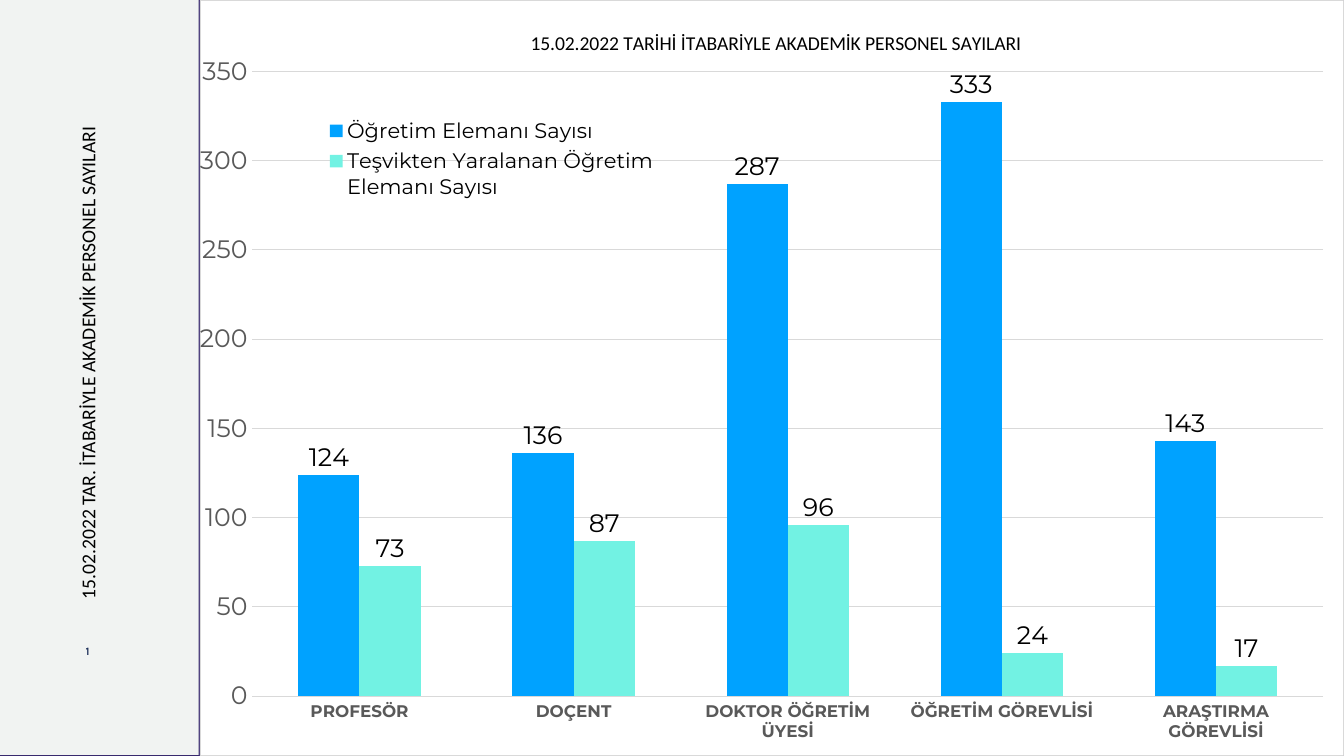
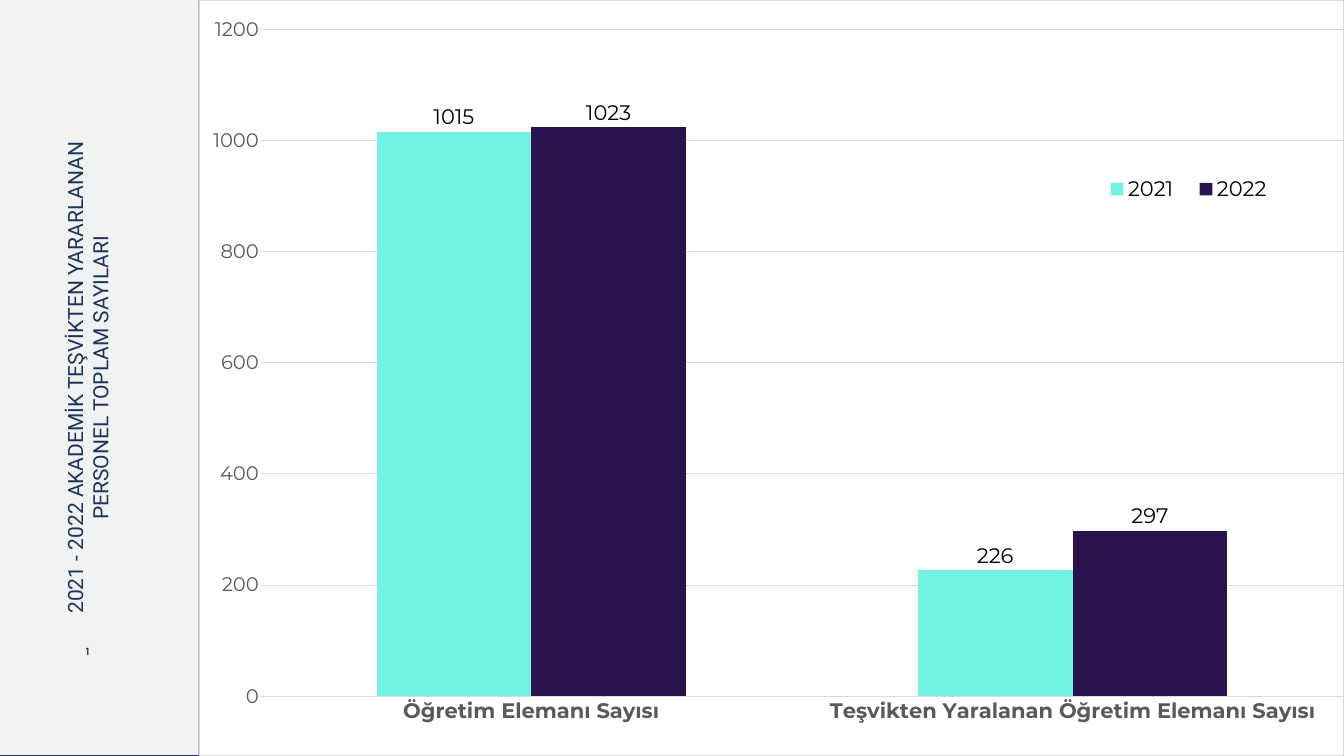
from lxml.etree import SubElement
from pptx import Presentation
from pptx.chart.data import CategoryChartData
from pptx.dml.color import RGBColor
from pptx.enum.chart import XL_CHART_TYPE, XL_LABEL_POSITION, XL_LEGEND_POSITION, XL_TICK_MARK
from pptx.enum.shapes import MSO_SHAPE
from pptx.enum.text import MSO_ANCHOR, MSO_AUTO_SIZE, PP_ALIGN
from pptx.oxml import parse_xml
from pptx.oxml.ns import nsdecls, qn
from pptx.util import Inches, Pt

PURPLE = RGBColor(0x38, 0x29, 0x6E)
BAND_GREY = RGBColor(0xF1, 0xF3, 0xF2)
NAVY = RGBColor(0x20, 0x32, 0x5C)
BLACK = RGBColor(0, 0, 0)
WHITE = RGBColor(0xFF, 0xFF, 0xFF)
AXIS_GREY = RGBColor(0x59, 0x59, 0x59)
GRID_GREY = RGBColor(0xD9, 0xD9, 0xD9)
BLUE = RGBColor(0x00, 0xA2, 0xFF)
TURQUOISE = RGBColor(0x72, 0xF2, 0xE3)
DARK_PURPLE = RGBColor(0x29, 0x14, 0x4E)

CHART_FONT = "Montserrat"
TITLE_ONLY = 5


def style_font(font, name, size, color, bold=False):
    font.name = name
    font.size = Pt(size)
    font.bold = bold
    font.color.rgb = color


def write_line(frame, text, name, size, color, bold=False):
    """Put one centred line of text into a frame with the shared margins."""
    frame.auto_size = MSO_AUTO_SIZE.NONE
    frame.vertical_anchor = MSO_ANCHOR.MIDDLE
    frame.margin_left = frame.margin_right = Inches(0.08)
    frame.margin_top = frame.margin_bottom = Inches(0.08)
    paragraph = frame.paragraphs[0]
    paragraph.alignment = PP_ALIGN.CENTER
    run = paragraph.add_run()
    run.text = text
    style_font(run.font, name, size, color, bold)


def add_side_band(slide, page):
    band = slide.shapes.add_shape(
        MSO_SHAPE.RECTANGLE, 0, Inches(-0.02), Inches(3.94), Inches(15))
    band.shadow.inherit = False
    band.fill.solid()
    band.fill.fore_color.rgb = BAND_GREY
    band.line.fill.background()
    page_number = slide.shapes.add_textbox(
        Inches(1.59), Inches(12.7), Inches(0.3), Inches(0.43))
    page_number.text_frame.word_wrap = False
    write_line(page_number.text_frame, page, "Karla", 16, NAVY, bold=True)


def set_side_title(slide, text, box, name, size, color):
    """Turn the title upwards and bring it in front of the band."""
    title = slide.shapes.title
    title.left, title.top, title.width, title.height = map(Inches, box)
    title.rotation = 270
    title.text_frame.word_wrap = True
    write_line(title.text_frame, text, name, size, color)
    slide.shapes._spTree.append(title._element)


def set_layout(part, index, inner=False, **fractions):
    """Place a chart part by fractions of the chart area."""
    for old in part.findall(qn("c:layout")):
        part.remove(old)
    layout = parse_xml(f"<c:layout {nsdecls('c')}><c:manualLayout/></c:layout>")
    values = {"layoutTarget": "inner"} if inner else {}
    values.update(xMode="edge", yMode="edge", **fractions)
    for tag, value in values.items():
        SubElement(layout[0], qn(f"c:{tag}")).set("val", str(value))
    part.insert(index, layout)


def paint_chart_area(chart):
    chart_area = parse_xml(
        f'<c:spPr {nsdecls("c", "a")}>'
        f'<a:solidFill><a:srgbClr val="{WHITE}"/></a:solidFill>'
        f'<a:ln w="{Pt(0.75)}"><a:solidFill><a:srgbClr val="{GRID_GREY}"/></a:solidFill></a:ln>'
        '</c:spPr>')
    chart._chartSpace.find(qn("c:chart")).addnext(chart_area)


def style_axis(axis, size, tick, bold=False):
    style_font(axis.tick_labels.font, CHART_FONT, size, AXIS_GREY, bold)
    axis.major_tick_mark = tick
    axis.minor_tick_mark = XL_TICK_MARK.NONE
    axis.format.line.fill.background()


def add_column_chart(slide, left, width, categories, series, label_size,
                     category_size, value_size, top_value, step, tick, plot, legend):
    """Series are (name, values, colour); plot and legend are layout fractions."""
    data = CategoryChartData()
    data.categories = categories
    for name, values, _ in series:
        data.add_series(name, values)
    chart = slide.shapes.add_chart(
        XL_CHART_TYPE.COLUMN_CLUSTERED, Inches(left), 0,
        Inches(width), Inches(15), data).chart
    style_font(chart.font, CHART_FONT, 10, BLACK)
    paint_chart_area(chart)
    chart.has_title = False

    columns = chart.plots[0]
    columns.gap_width = 150
    columns.overlap = 0
    columns.vary_by_categories = False
    for column, (_, _, color) in zip(columns.series, series):
        column.format.fill.solid()
        column.format.fill.fore_color.rgb = color
        labels = column.data_labels
        labels.show_value = True
        labels.position = XL_LABEL_POSITION.OUTSIDE_END
        style_font(labels.font, CHART_FONT, label_size, BLACK)

    style_axis(chart.category_axis, category_size, tick, bold=True)
    value_axis = chart.value_axis
    style_axis(value_axis, value_size, tick)
    value_axis.minimum_scale = 0
    value_axis.maximum_scale = top_value
    value_axis.major_unit = step
    value_axis.has_major_gridlines = True
    value_axis.major_gridlines.format.line.color.rgb = GRID_GREY
    value_axis.major_gridlines.format.line.width = Pt(0.75)

    chart.has_legend = True
    chart.legend.position = XL_LEGEND_POSITION.RIGHT
    chart.legend.include_in_layout = False
    style_font(chart.legend.font, CHART_FONT, 30, BLACK)
    set_layout(chart.legend._element, 1, **legend)
    set_layout(chart._chartSpace.find(".//" + qn("c:plotArea")), 0, inner=True, **plot)
    return chart


def add_chart_title(chart, text):
    chart.has_title = True
    run = chart.chart_title.text_frame.paragraphs[0].add_run()
    run.text = text
    style_font(run.font, "Calibri", 28, BLACK)
    set_layout(chart.chart_title._element, 1, x=0.286, y=0.034)


def add_slide(prs, page="1"):
    slide = prs.slides.add_slide(prs.slide_layouts[TITLE_ONLY])
    add_side_band(slide, page)
    return slide


def build_staff_by_rank(prs):
    slide = add_slide(prs)
    set_side_title(slide, "15.02.2022 TAR. İTABARİYLE AKADEMİK PERSONEL SAYILARI",
                   (-3.41, 6.89, 10.29, 0.63), "Calibri", 28, BLACK)
    chart = add_column_chart(
        slide, 3.96, 22.71,
        ["PROFESÖR", "DOÇENT", "DOKTOR ÖĞRETİM ÜYESİ", "ÖĞRETİM GÖREVLİSİ",
         "ARAŞTIRMA GÖREVLİSİ"],
        [("Öğretim Elemanı Sayısı", (124, 136, 287, 333, 143), BLUE),
         ("Teşvikten Yaralanan Öğretim Elemanı Sayısı", (73, 87, 96, 24, 17), TURQUOISE)],
        label_size=36, category_size=24, value_size=36, top_value=350, step=50,
        tick=XL_TICK_MARK.OUTSIDE,
        plot=dict(x=0.046, y=0.094, w=0.936, h=0.827),
        legend=dict(x=0.1, y=0.15, w=0.31, h=0.12))
    add_chart_title(chart, "15.02.2022 TARİHİ İTABARİYLE AKADEMİK PERSONEL SAYILARI")


def build_yearly_totals(prs):
    slide = add_slide(prs)
    set_side_title(slide, "2021 - 2022 AKADEMİK TEŞVİKTEN YARARLANAN PERSONEL TOPLAM SAYILARI",
                   (-3.12, 6.91, 9.71, 1.17), "Roboto", 30, NAVY)
    add_column_chart(
        slide, 3.94, 22.72,
        ["Öğretim Elemanı Sayısı", "Teşvikten Yaralanan Öğretim Elemanı Sayısı"],
        [("2021", (1015, 226), TURQUOISE), ("2022", (1023, 297), DARK_PURPLE)],
        label_size=30, category_size=30, value_size=28, top_value=1200, step=200,
        tick=XL_TICK_MARK.NONE,
        plot=dict(x=0.054, y=0.038, w=0.946, h=0.883),
        legend=dict(x=0.78, y=0.225, w=0.17, h=0.05))


def main():
    prs = Presentation()
    prs.slide_width = Inches(26.67)
    prs.slide_height = Inches(15)
    background = prs.slide_master.background.fill
    background.solid()
    background.fore_color.rgb = PURPLE
    build_staff_by_rank(prs)
    build_yearly_totals(prs)
    prs.save("out.pptx")


if __name__ == "__main__":
    main()
